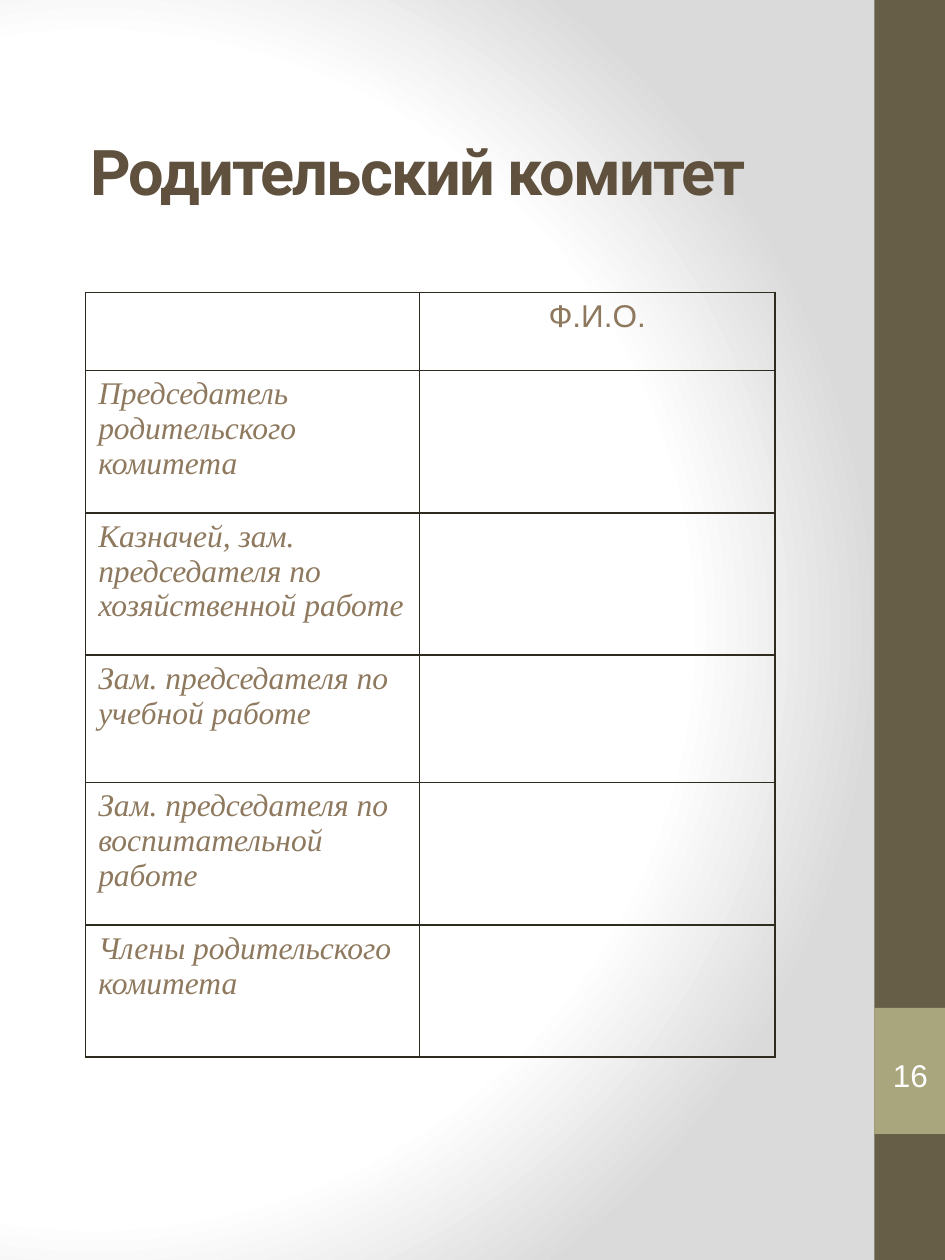
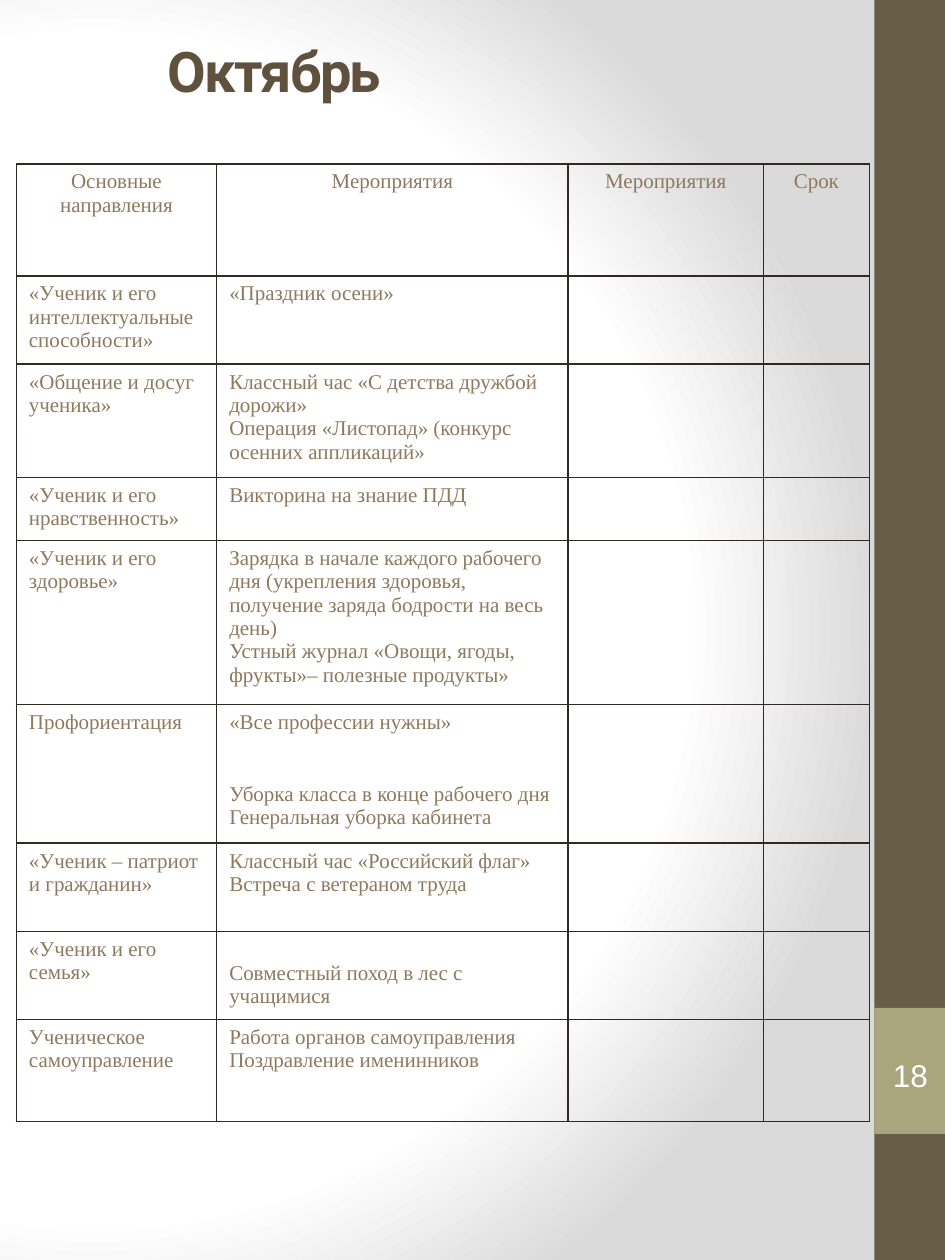
from dataclasses import dataclass

from lxml.etree import SubElement
from pptx import Presentation
from pptx.dml.color import RGBColor
from pptx.enum.shapes import MSO_SHAPE as Shape
from pptx.enum.text import MSO_ANCHOR as Anchor, PP_ALIGN as Align
from pptx.oxml.ns import qn
from pptx.util import Inches, Pt

BLANK_LAYOUT = 6


@dataclass(frozen=True)
class Theme:
    width: float = 7.5
    height: float = 10
    band_width: float = 0.56
    band: str = "675E47"
    tab: str = "A9A57C"
    title: str = "5F513E"
    body: str = "8E795E"
    border: str = "2F2B20"
    page_number: str = "FFFFFF"
    backdrop: tuple = ((0, "FFFFFF"), (75, "FFFFFF"), (100, "DADADA"))
    title_font: str = "Roboto"
    label_font: str = "Arial"
    table_font: str = "Times New Roman"
    large_size: int = 18
    small_size: int = 12
    border_width: float = 1


THEME = Theme()


@dataclass(frozen=True)
class Cell:
    """Cell text, one paragraph per line, with optional gaps in points."""
    text: str = ""
    font: str = THEME.table_font
    italic: bool = False
    align: Align = Align.LEFT
    top_gap: float = 0
    gaps: tuple = ()  # pairs of paragraph index and space before it


def style_runs(paragraph, font, size, color, bold=False, italic=False):
    for run in paragraph.runs:
        run.font.name = font
        run.font.size = Pt(size)
        run.font.color.rgb = RGBColor.from_string(color)
        run.font.bold = bold
        run.font.italic = italic


def add_color(parent, color):
    SubElement(parent, qn("a:srgbClr"), val=color)


def set_backdrop(slide):
    """Circular gradient centred on the left part of the slide."""
    slide.background.fill.gradient()
    gradient = slide.element.find(".//" + qn("a:gradFill"))
    for child in list(gradient):
        gradient.remove(child)
    stops = SubElement(gradient, qn("a:gsLst"))
    for position, color in THEME.backdrop:
        add_color(SubElement(stops, qn("a:gs"), pos=str(position * 1000)), color)
    circle = SubElement(gradient, qn("a:path"))
    circle.set("path", "circle")
    SubElement(circle, qn("a:fillToRect"), l="20000", t="50000", r="100000", b="50000")


def add_plain_shape(slide, kind, box, color=None):
    shape = slide.shapes.add_shape(kind, *map(Inches, box))
    shape.shadow.inherit = False
    shape.line.fill.background()
    if color:
        shape.fill.solid()
        shape.fill.fore_color.rgb = RGBColor.from_string(color)
    else:
        shape.fill.background()
    return shape


def add_side_band(slide, page):
    left = THEME.width - THEME.band_width
    add_plain_shape(slide, Shape.RECTANGLE,
                    (left, 0, THEME.band_width, THEME.height), THEME.band)
    add_plain_shape(slide, Shape.RECTANGLE, (left, 8, THEME.band_width, 1), THEME.tab)
    number = add_plain_shape(slide, Shape.DOUBLE_BRACKET, (left + 0.06, 8.24, 0.45, 0.58))
    frame = number.text_frame
    frame.margin_left = frame.margin_right = frame.margin_top = frame.margin_bottom = 0
    frame.vertical_anchor = Anchor.MIDDLE
    frame.text = str(page)
    paragraph = frame.paragraphs[0]
    paragraph.alignment = Align.CENTER
    style_runs(paragraph, THEME.label_font, THEME.large_size, THEME.page_number)


def add_title(slide, box, text, size):
    frame = slide.shapes.add_textbox(*map(Inches, box)).text_frame
    frame.word_wrap = True
    frame.vertical_anchor = Anchor.MIDDLE
    frame.text = text
    paragraph = frame.paragraphs[0]
    style_runs(paragraph, THEME.title_font, size, THEME.title, bold=True)
    for run in paragraph.runs:
        run.font._element.set("spc", "-100")


def set_borders(cell):
    properties = cell._tc.get_or_add_tcPr()
    for index, side in enumerate(("lnL", "lnR", "lnT", "lnB")):
        line = SubElement(properties, qn("a:" + side), w=str(Pt(THEME.border_width)))
        add_color(SubElement(line, qn("a:solidFill")), THEME.border)
        properties.insert(index, line)


def fill_cell(cell, content, size):
    cell.fill.background()
    set_borders(cell)
    cell.margin_top = Inches(0.05) + Pt(content.top_gap)
    cell.text_frame.text = content.text
    gaps = dict(content.gaps)
    for index, paragraph in enumerate(cell.text_frame.paragraphs):
        paragraph.alignment = content.align
        paragraph.font.size = Pt(size)
        if index in gaps:
            paragraph.space_before = Pt(gaps[index])
        style_runs(paragraph, content.font, size, THEME.body, italic=content.italic)


def add_grid(slide, origin, columns, rows, contents, size):
    """Bordered table; contents holds the leading cells of each row."""
    box = (*origin, sum(columns), sum(rows))
    table = slide.shapes.add_table(len(rows), len(columns), *map(Inches, box)).table
    table.first_row = table.horz_banding = False
    for column, width in zip(table.columns, columns):
        column.width = Inches(width)
    for row, height, cells in zip(table.rows, rows, contents):
        row.height = Inches(height)
        padded = cells + [Cell()] * (len(columns) - len(cells))
        for cell, content in zip(row.cells, padded):
            fill_cell(cell, content, size)


def add_page(presentation, page):
    slide = presentation.slides.add_slide(presentation.slide_layouts[BLANK_LAYOUT])
    set_backdrop(slide)
    add_side_band(slide, page)
    return slide


def build_committee(presentation):
    slide = add_page(presentation, 16)
    add_title(slide, (0.62, 0.52, 6.5, 1.67), "Родительский комитет", 36)
    roles = (
        "Председатель родительского комитета",
        "Казначей, зам. председателя по хозяйственной работе",
        "Зам. председателя по учебной работе",
        "Зам. председателя по воспитательной работе",
        "Члены родительского комитета",
    )
    header = [Cell(), Cell("Ф.И.О.", font=THEME.label_font, align=Align.CENTER)]
    contents = [header] + [[Cell(role, italic=True)] for role in roles]
    add_grid(slide, (0.68, 2.32), (2.65, 2.82),
             (0.62, 1.13, 1.13, 1.01, 1.13, 1.05), contents, THEME.large_size)


def build_october(presentation):
    slide = add_page(presentation, 18)
    add_title(slide, (1.23, -0.28, 3.22, 1.67), "Октябрь", 32)
    headings = ("Основные направления", "Мероприятия", "Мероприятия", "Срок")
    line = THEME.small_size * 1.15
    plan = (
        ("«Ученик и его интеллектуальные способности»", Cell("«Праздник осени»")),
        ("«Общение и досуг ученика»",
         Cell("Классный час «С детства дружбой дорожи»\n"
              "Операция «Листопад» (конкурс осенних аппликаций»")),
        ("«Ученик и его нравственность»", Cell("Викторина на знание ПДД")),
        ("«Ученик и его здоровье»",
         Cell("Зарядка в начале каждого рабочего дня (укрепления здоровья, "
              "получение заряда бодрости на весь день)\n"
              "Устный журнал «Овощи, ягоды, фрукты»– полезные продукты»")),
        ("Профориентация",
         Cell("«Все профессии нужны»\nУборка класса в конце рабочего дня\n"
              "Генеральная уборка кабинета", gaps=((1, 2 * line),))),
        ("«Ученик – патриот и гражданин»",
         Cell("Классный час «Российский флаг»\nВстреча с ветераном труда")),
        ("«Ученик и его семья»",
         Cell("Совместный поход в лес с учащимися", top_gap=line)),
        ("Ученическое самоуправление",
         Cell("Работа органов самоуправления\nПоздравление именинников")),
    )
    contents = [[Cell(heading, align=Align.CENTER) for heading in headings]]
    contents += [[Cell(area), events] for area, events in plan]
    add_grid(slide, (0.13, 1.3), (1.59, 2.79, 1.55, 0.84),
             (0.89, 0.7, 0.9, 0.5, 1.3, 1.1, 0.7, 0.7, 0.81),
             contents, THEME.small_size)


def main():
    presentation = Presentation()
    presentation.slide_width = Inches(THEME.width)
    presentation.slide_height = Inches(THEME.height)
    build_committee(presentation)
    build_october(presentation)
    presentation.save("out.pptx")


if __name__ == "__main__":
    main()
